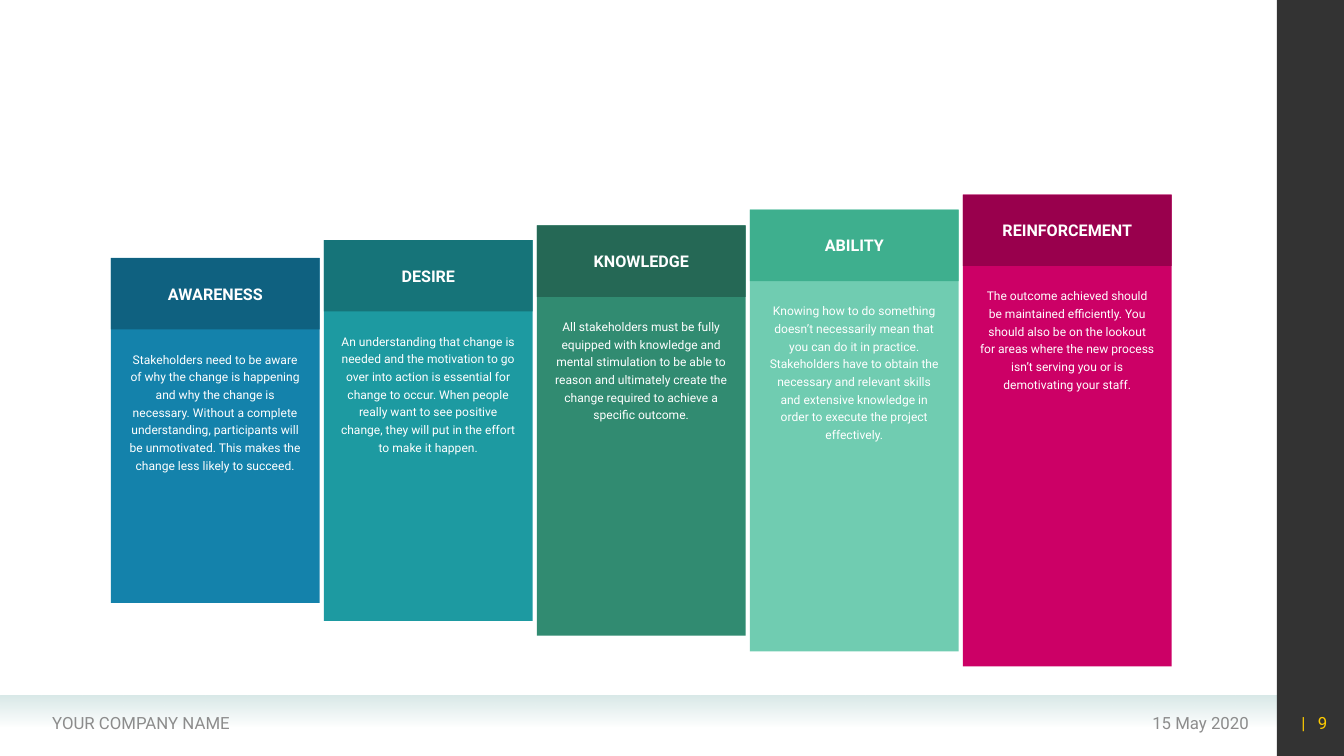
from collections import namedtuple

from lxml.etree import SubElement
from pptx import Presentation
from pptx.dml.color import RGBColor as Rgb
from pptx.enum.shapes import MSO_SHAPE as Kind
from pptx.enum.text import MSO_ANCHOR as Anchor, PP_ALIGN as Align
from pptx.oxml.ns import qn
from pptx.util import Pt

Theme = namedtuple("Theme", "font white gray gold mist dark foot head body")
theme = Theme("Roboto", "FFFFFF", "8C8C8C", "FFCC00", "D9E9E8", "000000",
              foot=12, head=11.5, body=8.6)

# label, top, head colour, card colour, text
steps = [
    ("AWARENESS", 184.3, "0F6180", "1482AB",
     "Stakeholders need to be aware of why the change is happening and why "
     "the change is necessary. Without a complete understanding, participants "
     "will be unmotivated. This makes the change less likely to succeed."),
    ("DESIRE", 171.5, "167479", "1D9AA1",
     "An understanding that change is needed and the motivation to go over "
     "into action is essential for change to occur. When people really want "
     "to see positive change, they will put in the effort to make it happen."),
    ("KNOWLEDGE", 161, "256855", "318B71",
     "All stakeholders must be fully equipped with knowledge and mental "
     "stimulation to be able to reason and ultimately create the change "
     "required to achieve a specific outcome."),
    ("ABILITY", 149.8, "3EAF8E", "70CCB1",
     "Knowing how to do something doesn’t necessarily mean that you can do it "
     "in practice. Stakeholders have to obtain the necessary and relevant "
     "skills and extensive knowledge in order to execute the project "
     "effectively."),
    ("REINFORCEMENT", 139, "99004D", "CC0066",
     "The outcome achieved should be maintained efficiently. You should also "
     "be on the lookout for areas where the new process isn’t serving you or "
     "is demotivating your staff."),
]

deck = Presentation()
deck.slide_width, deck.slide_height = Pt(960), Pt(540)
slide = deck.slides.add_slide(deck.slide_layouts[6])


def block(left, top, width, height, color):
    """Add a plain filled rectangle."""
    box = slide.shapes.add_shape(
        Kind.RECTANGLE, Pt(left), Pt(top), Pt(width), Pt(height))
    box.shadow.inherit = False
    box.line.fill.background()
    box.fill.solid()
    box.fill.fore_color.rgb = Rgb.from_string(color)
    return box


def write(box, text, size, color, align, anchor=Anchor.MIDDLE, bold=False):
    """Put one styled paragraph in a shape and return the paragraph."""
    frame = box.text_frame
    frame.text = text
    frame.word_wrap = True
    frame.vertical_anchor = anchor
    para = frame.paragraphs[0]
    para.alignment = align
    font = para.runs[0].font
    font.name, font.size, font.bold = theme.font, Pt(size), bold
    font.color.rgb = Rgb.from_string(color)
    return para


# Footer band and side bar
band = block(0, 496.8, 912, 22.4, theme.mist)
band.fill.gradient()
band.fill.gradient_angle = 270
for stop in band.fill.gradient_stops:
    stop.color.rgb = Rgb.from_string(theme.mist)
side = block(912, 0, 48, 540, theme.dark)
for shape, alpha in (band, 0), (side, 80):
    tint = list(shape.element.spPr.iter(qn("a:srgbClr")))[-1]
    SubElement(tint, qn("a:alpha")).set("val", str(alpha * 1000))

# Footer texts
for text, left, width, color, align in [
    ("15 May 2020", 655.2, 244, theme.gray, Align.RIGHT),
    ("YOUR COMPANY NAME", 30.2, 353, theme.gray, Align.LEFT),
    ("| ", 907.2, 48, theme.gold, Align.RIGHT),
]:
    box = slide.shapes.add_textbox(Pt(left), Pt(502), Pt(width), Pt(28.8))
    para = write(box, text, theme.foot, color, align)

# The page mark is spaced out from its number
para.runs[0].font._element.set("spc", "300")
page = para.add_run()
page.text = "9"
page.font.name, page.font.size = theme.font, Pt(theme.foot)
page.font.color.rgb = Rgb.from_string(theme.gold)

# Cards grow evenly up and down around one middle line
START, PITCH, WIDTH, HEAD, MIDDLE = 79.2, 152.15, 149.2, 51, 307.5
for i, (label, top, shade, color, text) in enumerate(steps):
    left = START + i * PITCH
    card = block(left, top, WIDTH, 2 * (MIDDLE - top), color)
    frame = card.text_frame
    frame.margin_left = frame.margin_right = Pt(11.9)
    frame.margin_top = Pt(65)
    para = write(card, text, theme.body, theme.white, Align.CENTER, Anchor.TOP)
    para.line_spacing, para.space_before = Pt(12.6), Pt(1.7)
    head = block(left, top, WIDTH, HEAD, shade)
    write(head, label, theme.head, theme.white, Align.CENTER, bold=True)

deck.save("out.pptx")
